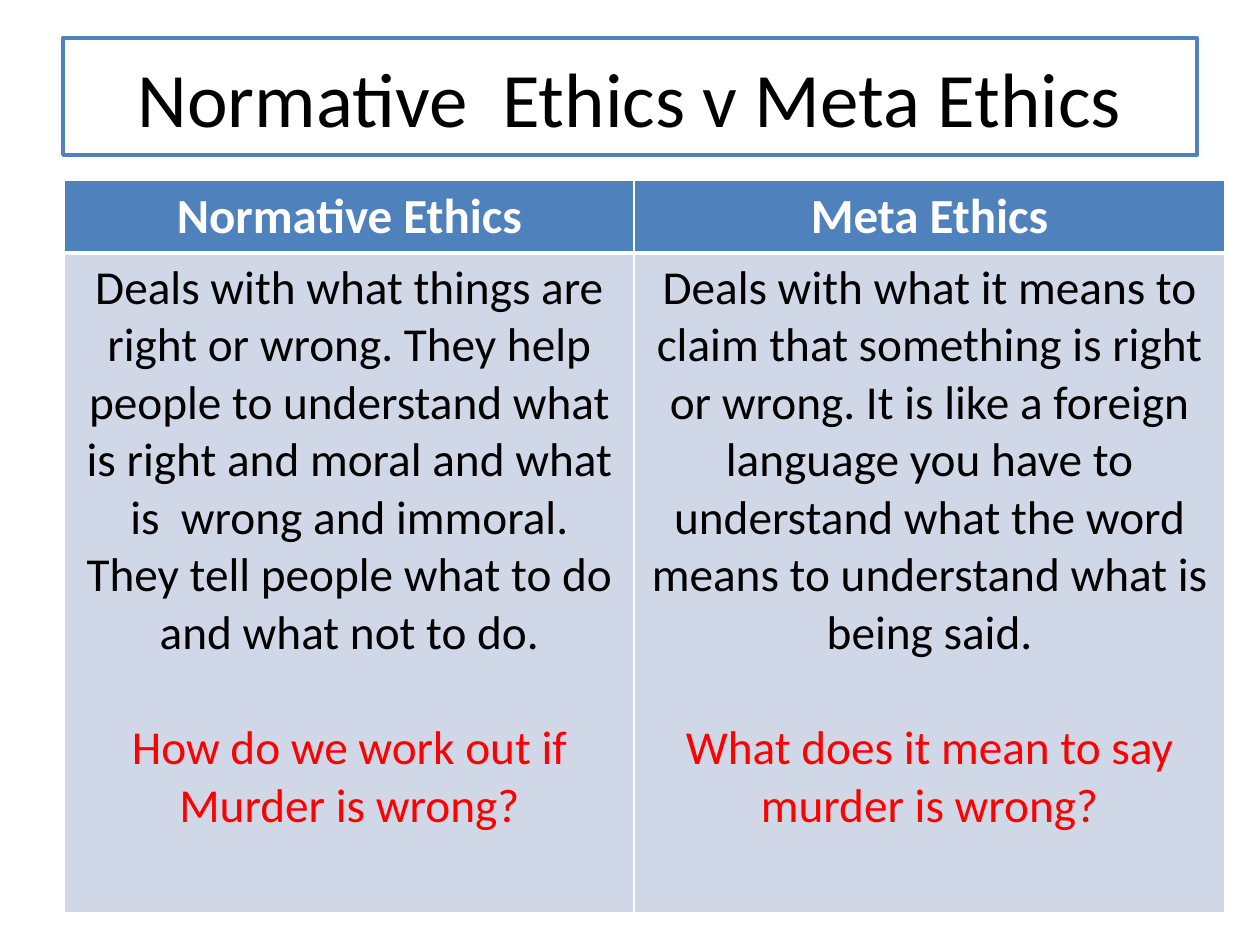
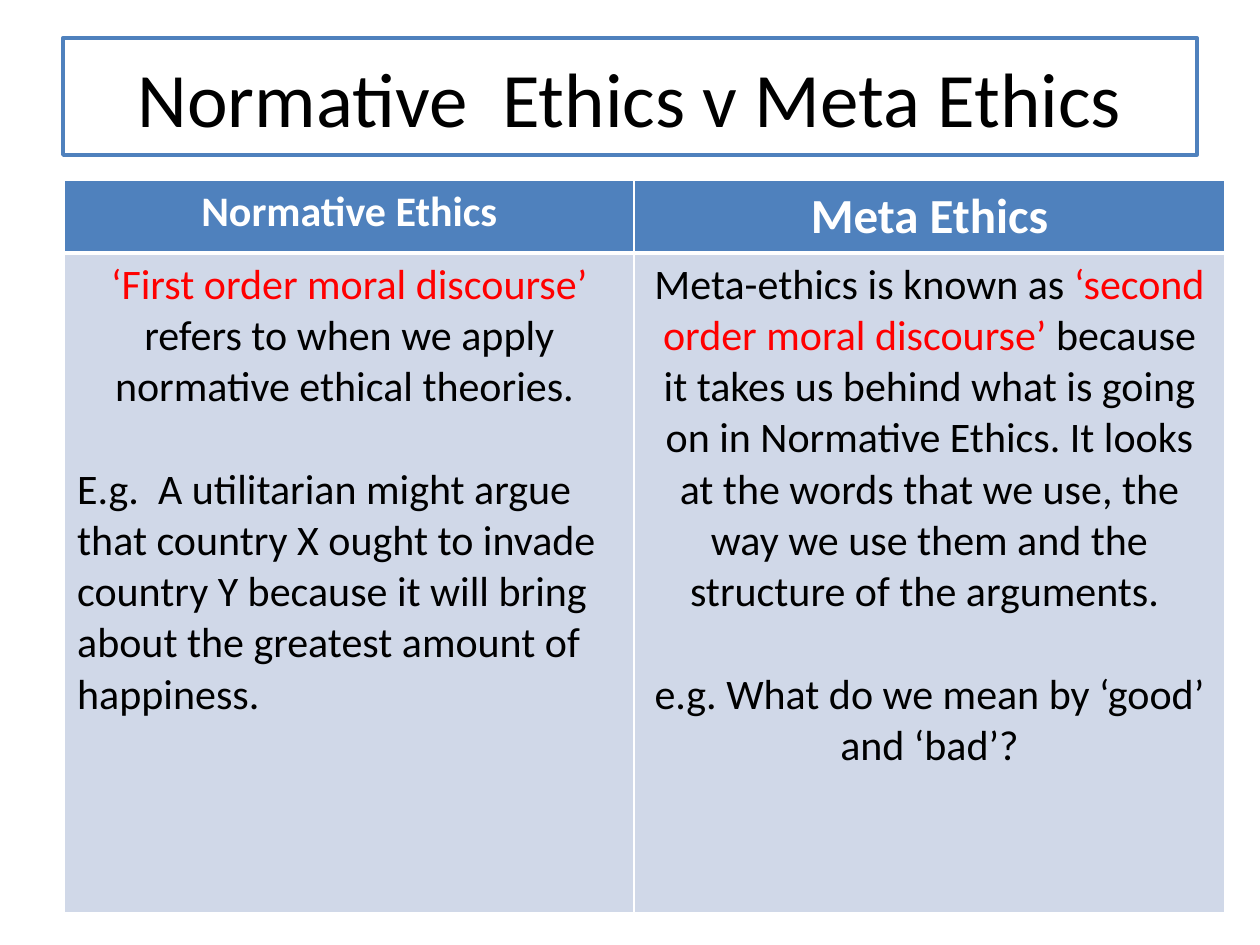
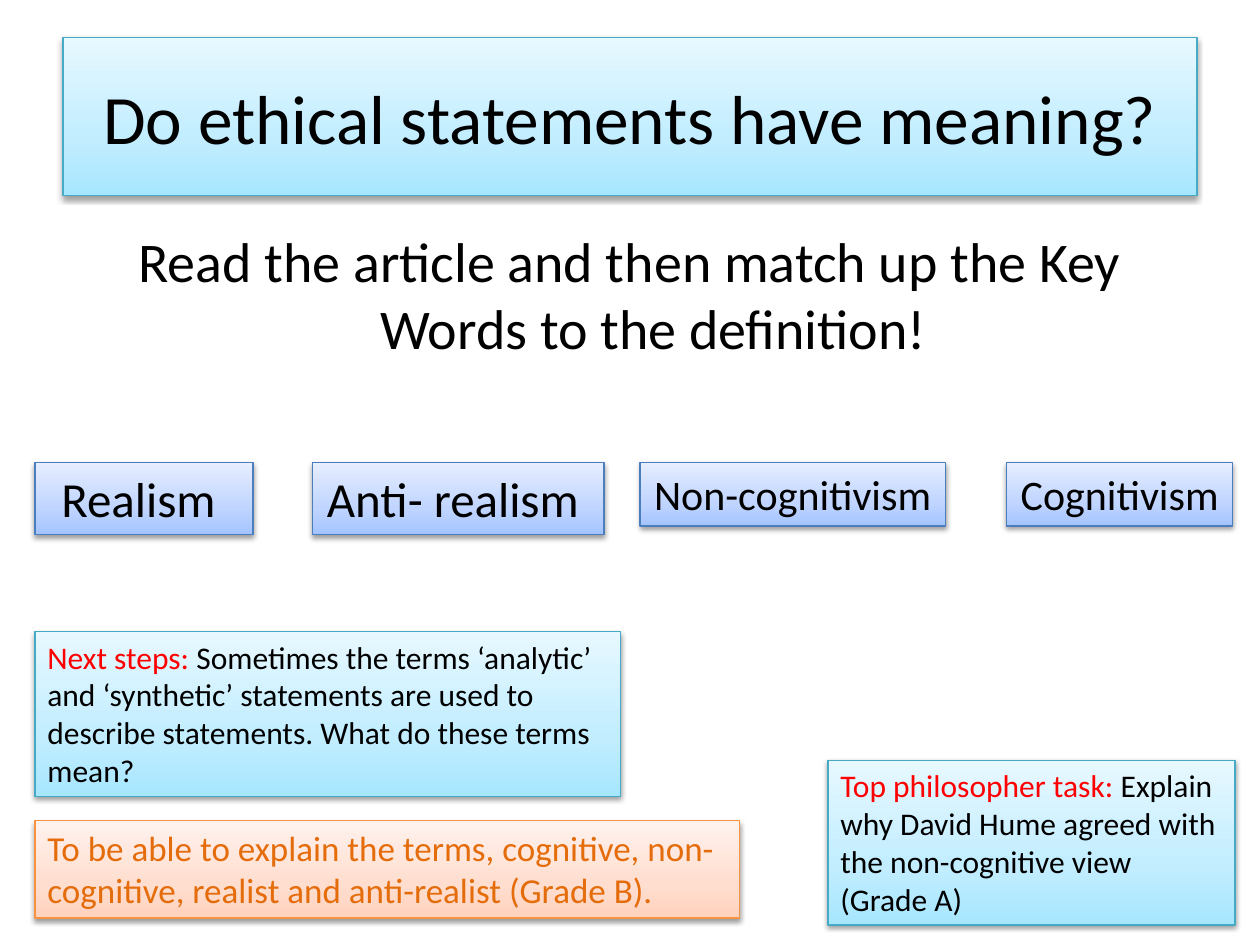
from lxml.etree import SubElement
from pptx import Presentation
from pptx.dml.color import RGBColor
from pptx.enum.shapes import MSO_SHAPE
from pptx.enum.text import MSO_ANCHOR, PP_ALIGN
from pptx.oxml import parse_xml
from pptx.oxml.ns import nsdecls, qn
from pptx.util import Pt

BLACK = RGBColor(0x00, 0x00, 0x00)
WHITE = RGBColor(0xFF, 0xFF, 0xFF)
RED = RGBColor(0xFF, 0x00, 0x00)
RUST = RGBColor(0xE4, 0x6C, 0x0A)
BLUE = RGBColor(0x4F, 0x81, 0xBD)
PALE = RGBColor(0xD0, 0xD8, 0xE8)

AQUA = (RGBColor(0xA7, 0xE6, 0xFF), RGBColor(0xC1, 0xED, 0xFF),
        RGBColor(0xE7, 0xF8, 0xFF), RGBColor(0x46, 0xAA, 0xC5))
SKY = (RGBColor(0xA4, 0xC4, 0xFF), RGBColor(0xBF, 0xD4, 0xFF),
       RGBColor(0xE6, 0xEE, 0xFF), RGBColor(0x4B, 0x7E, 0xBC))
PEACH = (RGBColor(0xFF, 0xD2, 0xBD), RGBColor(0xFF, 0xDE, 0xD0),
         RGBColor(0xFF, 0xF2, 0xED), RGBColor(0xF6, 0x92, 0x40))

FONT = "Calibri"
LEFT, MID = PP_ALIGN.LEFT, PP_ALIGN.CENTER
HEAD = "Normative  Ethics v Meta Ethics"
GRID = (36.9, 103.1, (325.4, 337.7), (41.4, 377))


def say(frame, runs, size=24, ink=BLACK, bold=False, align=LEFT, gap=0):
    """Add a paragraph of plain text or of (text, colour) runs."""
    para = frame.add_paragraph() if frame.text else frame.paragraphs[0]
    para.alignment = align
    para.space_before = Pt(gap)
    for text, tint in [(runs, ink)] if isinstance(runs, str) else runs:
        run = para.add_run()
        run.text = text
        font = run.font
        font.name, font.size, font.bold = FONT, Pt(size), bold
        font.color.rgb = tint
    return para


def glow(shape, tones):
    """Give a shape an upward gradient, a thin edge and a soft shadow."""
    stops = "".join(f'<a:gs pos="{pos}"><a:srgbClr val="{tone}"/></a:gs>'
                    for pos, tone in zip((0, 35000, 100000), tones))
    props = shape._element.spPr
    props.find(qn("a:prstGeom")).addnext(parse_xml(
        f'<a:gradFill {nsdecls("a")} rotWithShape="1"><a:gsLst>{stops}</a:gsLst>'
        '<a:lin ang="16200000" scaled="0"/></a:gradFill>'))
    shape.line.color.rgb = tones[3]
    shape.line.width = Pt(0.75)
    props.append(parse_xml(
        f'<a:effectLst {nsdecls("a")}><a:outerShdw blurRad="{Pt(3.1)}" '
        f'dist="{Pt(1.6)}" dir="5400000" rotWithShape="0">'
        '<a:srgbClr val="000000"><a:alpha val="38000"/></a:srgbClr>'
        '</a:outerShdw></a:effectLst>'))


def panel(slide, box, tones=None, anchor=MSO_ANCHOR.TOP, wrap=True):
    """Draw a box, glowing or plain, and return its text frame."""
    shape = slide.shapes.add_shape(MSO_SHAPE.RECTANGLE, *map(Pt, box))
    if tones:
        glow(shape, tones)
    else:
        shape.shadow.inherit = False
        shape.fill.solid()
        shape.fill.fore_color.rgb = WHITE
        shape.line.color.rgb = BLUE
        shape.line.width = Pt(2)
    frame = shape.text_frame
    frame.word_wrap = wrap
    frame.vertical_anchor = anchor
    return frame


def title(slide, text, high, size, tones=None):
    """Draw the boxed title across the top."""
    frame = panel(slide, (36, 21.6, 648, high), tones, MSO_ANCHOR.MIDDLE)
    say(frame, text, size=size, align=MID)


def paint(cell, fill, top, base):
    """Fill a cell and draw its white borders."""
    cell.fill.solid()
    cell.fill.fore_color.rgb = fill
    props = cell._tc.get_or_add_tcPr()
    for spot, (side, width) in enumerate(zip("LRTB", (1, 1, top, base))):
        line = parse_xml(f'<a:ln{side} {nsdecls("a")} w="{Pt(width)}"/>')
        solid = SubElement(line, qn("a:solidFill"))
        SubElement(solid, qn("a:srgbClr"), val=str(WHITE))
        props.insert(spot, line)


def versus(slide, size, heads, texts):
    """Build a title and a table that compares two kinds of ethics."""
    title(slide, HEAD, 67, 44)
    left, top, cols, rows = GRID
    table = slide.shapes.add_table(
        2, 2, Pt(left), Pt(top), Pt(sum(cols)), Pt(sum(rows))).table
    for row, high in zip(table.rows, rows):
        row.height = Pt(high)
    for col, (wide, (head, big), paras) in enumerate(zip(cols, heads, texts)):
        table.columns[col].width = Pt(wide)
        cell = table.cell(0, col)
        paint(cell, BLUE, 1, 3)
        say(cell.text_frame, head, size=big, ink=WHITE, bold=True, align=MID)
        cell = table.cell(1, col)
        paint(cell, PALE, 3, 1)
        for runs, style in paras:
            say(cell.text_frame, runs, size=size, **{"align": MID, **style})


def task(slide):
    """Build the matching task with its key words and notes."""
    title(slide, "Do ethical statements have meaning?", 90, 39.6, AQUA)
    frame = slide.shapes.add_textbox(Pt(36), Pt(126), Pt(648), Pt(90)).text_frame
    frame.word_wrap = True
    para = say(frame, "Read the article and then match up the Key Words "
               "to the definition!", size=32, align=MID)
    props = para._p.get_or_add_pPr()
    props.set("marL", str(Pt(27)))
    props.set("indent", str(Pt(-27)))

    for word, left, wide, high, size in (
            ("Realism ", 20, 124.6, 41.2, 28),
            ("Anti- realism ", 178.6, 166.6, 41.2, 28),
            ("Non-cognitivism", 365.8, 174.4, 36.2, 24),
            ("Cognitivism", 575.3, 129, 36.2, 24)):
        frame = panel(slide, (left, 264.4, wide, high), SKY, wrap=False)
        say(frame, word, size=size, align=MID)

    for box, tones, size, runs in (
            ((20, 469, 402.5, 55.6), PEACH, 20,
             [("To be able to explain the terms, cognitive, non-cognitive, "
               "realist and anti-realist (Grade B).", RUST)]),
            ((473.2, 434.4, 232.6, 94.2), AQUA, 18,
             [("Top philosopher task: ", RED),
              ("Explain why David Hume agreed with the non-cognitive view "
               "(Grade A)", BLACK)]),
            ((20, 360.8, 334.6, 94.2), AQUA, 18,
             [("Next steps: ", RED),
              ("Sometimes the terms ‘analytic’ and ‘synthetic’ statements are "
               "used to describe statements. What do these terms mean?", BLACK)])):
        say(panel(slide, box, tones), runs, size=size)


def main():
    """Build the three slides and save them."""
    deck = Presentation()
    deck.slide_width, deck.slide_height = Pt(720), Pt(540)
    one, two, three = (deck.slides.add_slide(deck.slide_layouts[6])
                       for _ in range(3))
    ask = {"ink": RED, "gap": 33}
    versus(one, 27, (("Normative Ethics", 28), ("Meta Ethics", 28)), (
        (("Deals with what things are right or wrong. They help people to "
          "understand what is right and moral and what is  wrong and immoral.", {}),
         ("They tell people what to do and what not to do.", {}),
         ("How do we work out if Murder is wrong?", ask)),
        (("Deals with what it means to claim that something is right or wrong. "
          "It is like a foreign language you have to understand what the word "
          "means to understand what is being said.", {}),
         ("What does it mean to say murder is wrong?", ask))))
    versus(two, 24, (("Normative Ethics", 24), ("Meta Ethics", 28)), (
        (([("‘First order moral discourse’ ", RED),
           ("refers to when we apply normative ethical theories. ", BLACK)], {}),
         ("E.g.  A utilitarian might argue that country X ought to invade "
          "country Y because it will bring about the greatest amount of "
          "happiness.", {"align": LEFT, "gap": 29.3})),
        (([("Meta-ethics is known as", BLACK),
           (" ‘second order moral discourse’ ", RED),
           ("because it takes us behind what is going on in Normative Ethics. "
            "It looks at the words that we use, the way we use them and the "
            "structure of the arguments. ", BLACK)], {}),
         ("e.g. What do we mean by ‘good’ and ‘bad’?", {"gap": 29.3}))))
    task(three)
    deck.save("out.pptx")


if __name__ == "__main__":
    main()
